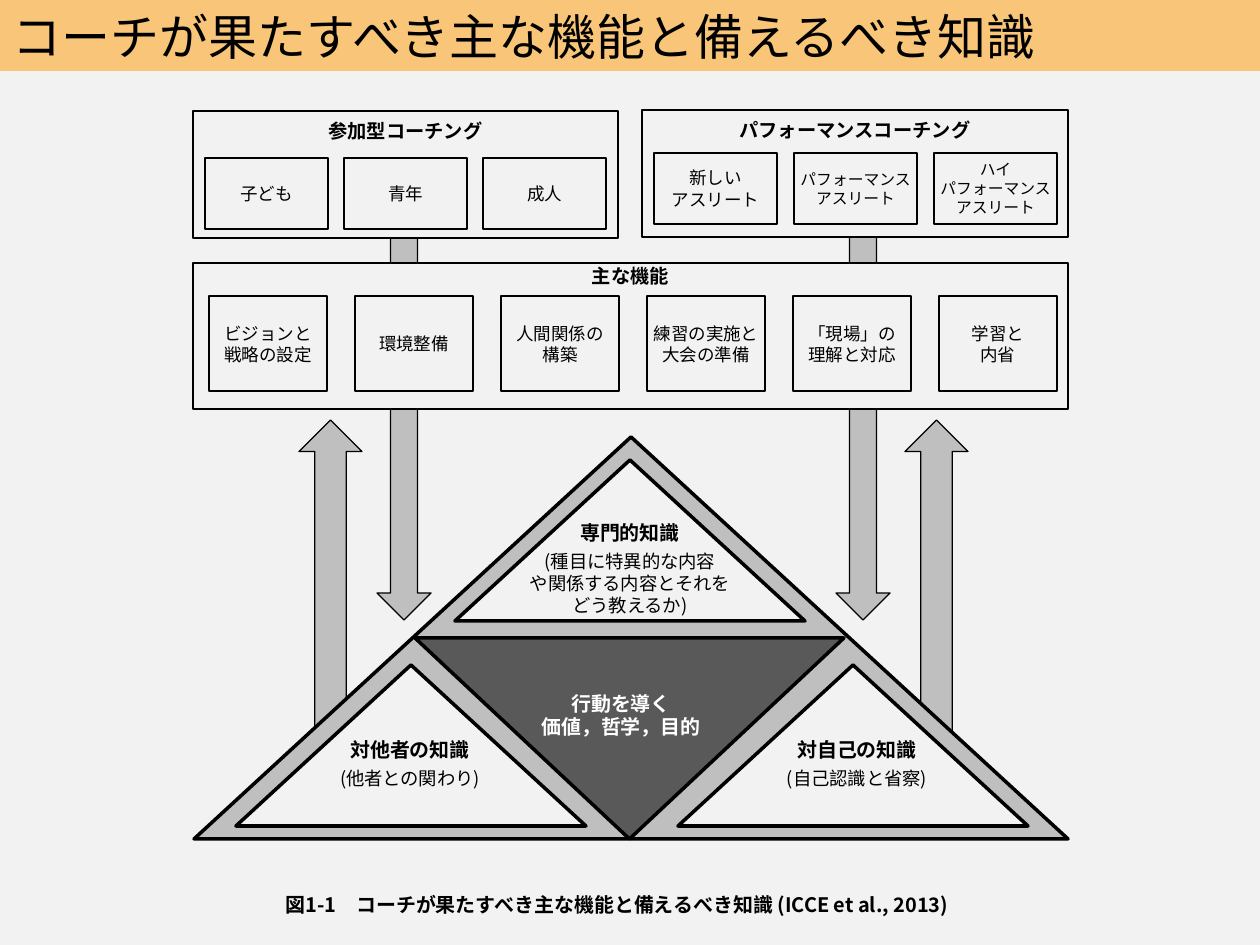
from lxml import etree
from pptx import Presentation
from pptx import util as u
from pptx.dml.color import RGBColor
from pptx.enum import shapes, text
from pptx.oxml import ns

BLACK = RGBColor(0, 0, 0)
WHITE = RGBColor(255, 255, 255)
PALE = RGBColor(0xF2, 0xF2, 0xF2)
GREY = RGBColor(0xBF, 0xBF, 0xBF)
DARK = RGBColor(0x59, 0x59, 0x59)
AMBER = RGBColor(0xF9, 0xC6, 0x79)
FACE = "Noto Sans CJK JP"
KIND = shapes.MSO_SHAPE
MID = text.MSO_ANCHOR.MIDDLE
TOP = text.MSO_ANCHOR.TOP


def px(n):
    """Turn pixels, 126 to the inch, into EMU."""
    return u.Emu(round(n * 914400 / 126))


def write(shape, words, size, bold=False, color=BLACK, face=FACE,
          align=text.PP_ALIGN.CENTER, anchor=MID, pad=(0, 0)):
    """Fill a shape with one paragraph per line of words."""
    frame = shape.text_frame
    frame.text = words
    frame.word_wrap = True
    frame.auto_size = text.MSO_AUTO_SIZE.NONE
    frame.vertical_anchor = anchor
    frame.margin_left = frame.margin_right = px(pad[0])
    frame.margin_top = px(pad[1])
    frame.margin_bottom = 0
    for para in frame.paragraphs:
        para.alignment = align
        font = para.font
        font.size, font.bold, font.name = u.Pt(size), bold, face
        font.color.rgb = color
        props = para._p.get_or_add_pPr().get_or_add_defRPr()
        etree.SubElement(props, ns.qn("a:ea"), typeface=FACE)


def draw(slide, kind, box, fill, width=0.75):
    """Add a filled, black-edged preset shape."""
    shape = slide.shapes.add_shape(kind, *map(px, box))
    shape.shadow.inherit = False
    shape.fill.solid()
    shape.fill.fore_color.rgb = fill
    shape.line.color.rgb = BLACK
    shape.line.width = u.Pt(width)
    return shape


def label(slide, box, words, size, **style):
    """Add a text box."""
    write(slide.shapes.add_textbox(*map(px, box)), words, size, **style)


def head(slide, box):
    """Style the title placeholder as a band."""
    title = slide.shapes.title
    title.left, title.top, title.width, title.height = map(px, box)
    title.fill.solid()
    title.fill.fore_color.rgb = AMBER
    write(title, "コーチが果たすべき主な機能と備えるべき知識", 28, face="Lato",
          align=text.PP_ALIGN.LEFT, pad=(13, 0))


def panel(slide, box, name, cells, first, step, drop):
    """Draw a headed panel with an even row of cells."""
    left, top = box[:2]
    frame = draw(slide, KIND.RECTANGLE, box, PALE)
    write(frame, name, 11, bold=True, anchor=TOP, pad=(0, drop))
    x, y, wide, high = first
    for i, (words, size) in enumerate(cells):
        spot = (left + x + i * step, top + y, wide, high)
        write(draw(slide, KIND.RECTANGLE, spot, PALE), words, size)


def arrows(slide, box):
    """Draw the upward and downward arrows in mirrored pairs."""
    left, top, wide, high = box
    for kind, inset, y, w, h in ((KIND.UP_ARROW, 0, 183, 63, 319),
                                 (KIND.DOWN_ARROW, 78, 0, 54, high - 119)):
        for x in (left + inset, left + wide - inset - w):
            draw(slide, kind, (x, top + y, w, h), GREY)


def pyramid(slide, box):
    """Draw the knowledge triangle with its four parts."""
    left, top, wide, high = box
    draw(slide, KIND.FLOWCHART_EXTRACT, box, GREY, 2)
    core = (left + wide // 4 + 3, top + high // 2, 429, high // 2)
    draw(slide, KIND.FLOWCHART_MERGE, core, DARK, 2)
    label(slide, (left + 326, top + 247, 202, 62),
          "行動を導く\n価値，哲学，目的", 11.4, bold=True, color=WHITE)
    parts = (
        (261, 23, 261, 77, 78, "専門的知識",
         "(種目に特異的な内容\nや関係する内容とそれをどう教えるか)"),
        (42, 228, 41, 294, 35, "対他者の知識", "(他者との関わり)"),
        (484, 228, 488, 294, 35, "対自己の知識", "(自己認識と省察)"),
    )
    for x, y, across, down, tall, name, note in parts:
        draw(slide, KIND.FLOWCHART_EXTRACT,
             (left + x, top + y, 350, 161), PALE, 2)
        spot = left + across + 57
        label(slide, (spot, top + down, 236, 37), name, 11.4, bold=True)
        label(slide, (spot, top + down + 30, 236, tall), note, 10.5,
              anchor=TOP, pad=(13, 6))


def main():
    """Build and save the slide."""
    deck = Presentation()
    deck.slide_width, deck.slide_height = px(1260), px(945)
    slide = deck.slides.add_slide(deck.slide_layouts[5])
    slide.background.fill.solid()
    slide.background.fill.fore_color.rgb = PALE
    head(slide, (0, 0, 1260, 71))
    arrows(slide, (299, 237, 669, 502))
    pyramid(slide, (194, 437, 874, 402))
    panel(slide, (193, 111, 425, 127), "参加型コーチング",
          [("子ども", 10), ("青年", 10), ("成人", 10)],
          (12, 47, 123, 71), 139, 8)
    panel(slide, (642, 110, 426, 127), "パフォーマンスコーチング",
          [("新しい\nアスリート", 10), ("パフォーマンス\nアスリート", 9),
           ("ハイ\nパフォーマンス\nアスリート", 9)],
          (12, 43, 123, 71), 140, 8)
    roles = ("ビジョンと\n戦略の設定", "環境整備", "人間関係の\n構築",
             "練習の実施と\n大会の準備", "「現場」の\n理解と対応", "学習と\n内省")
    panel(slide, (193, 263, 875, 146), "主な機能",
          [(role, 10) for role in roles], (16, 33, 118, 95), 146, 1)
    label(slide, (242, 886, 750, 37),
          "図1-1　コーチが果たすべき主な機能と備えるべき知識 (ICCE et al., 2013)",
          11.4, bold=True)
    deck.save("out.pptx")


if __name__ == "__main__":
    main()
